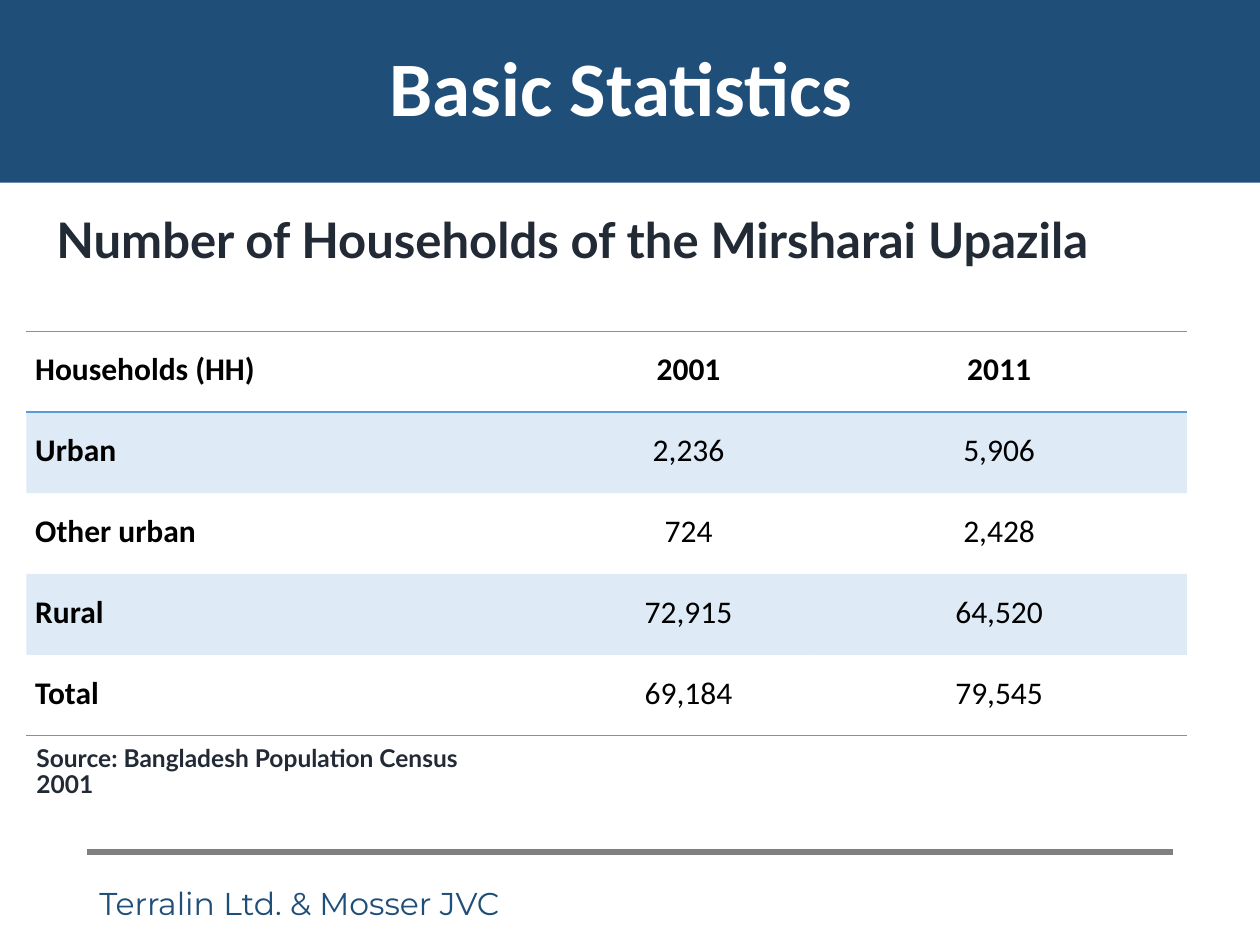
from lxml import etree
from pptx import Presentation
from pptx import util as u
from pptx.dml.color import RGBColor
from pptx.enum import shapes, text
from pptx.oxml import ns

NAVY, INK, GREY, BLUE = "1F4E79", "222A35", "808080", "5B9BD5"
WHITE, BLACK = "FFFFFF", "000000"
ALIGN = text.PP_ALIGN


def color(value):
    return RGBColor.from_string(value)


def add_element(parent, tag, **attributes):
    return etree.SubElement(parent, ns.qn(tag), attributes)


class SlideBuilder:
    heading_font, body_font, footer_font = "Calibri", "Lato", "Montserrat"
    band_alpha = "20000"

    def __init__(self, slide):
        self.slide = slide

    def place(self, shape, box):
        for name, value in zip(("left", "top", "width", "height"), box):
            setattr(shape, name, u.Inches(value))

    def set_words(self, frame, words, font, size, ink, bold=False, **paragraph_format):
        paragraph = frame.paragraphs[0]
        paragraph.text = words
        for name, value in paragraph_format.items():
            setattr(paragraph, name, value)
        values = {"name": font, "size": u.Pt(size), "bold": bold}
        for name, value in values.items():
            setattr(paragraph.runs[0].font, name, value)
        paragraph.runs[0].font.color.rgb = color(ink)

    def prepare(self, frame):
        frame.word_wrap = True
        frame.auto_size = text.MSO_AUTO_SIZE.NONE
        frame.vertical_anchor = text.MSO_ANCHOR.MIDDLE

    def title(self, words, box):
        shape = self.slide.shapes.title
        self.place(shape, box)
        shape.fill.solid()
        shape.fill.fore_color.rgb = color(NAVY)
        self.prepare(shape.text_frame)
        self.set_words(shape.text_frame, words, self.heading_font, 44, WHITE, True,
                       alignment=ALIGN.CENTER, line_spacing=0.9)

    def text_box(self, words, box, *style, **paragraph_format):
        shape = self.slide.shapes.add_textbox(*map(u.Inches, box))
        self.prepare(shape.text_frame)
        self.set_words(shape.text_frame, words, *style, **paragraph_format)

    def line(self, start, end, ink, width):
        connector = self.slide.shapes.add_connector(
            shapes.MSO_CONNECTOR.STRAIGHT, *map(u.Inches, start + end))
        connector.line.color.rgb = color(ink)
        connector.line.width = u.Pt(width)
        add_element(connector._element.spPr, "a:effectLst")

    def borders(self, cell, ruled):
        """Draw the sides named in ruled and clear the others."""
        properties = cell._tc.get_or_add_tcPr()
        for side in "LRTB":
            border = add_element(properties, f"a:ln{side}", w=str(u.Pt(1)))
            if side in ruled:
                fill = add_element(border, "a:solidFill")
                add_element(fill, "a:srgbClr", val=BLUE)
            else:
                add_element(border, "a:noFill")

    def band(self, cell):
        cell.fill.solid()
        cell.fill.fore_color.rgb = color(BLUE)
        shade = cell._tc.tcPr.find(ns.qn("a:solidFill"))[0]
        add_element(shade, "a:alpha", val=self.band_alpha)

    def table(self, rows, box, widths):
        table = self.slide.shapes.add_table(
            len(rows), len(widths), *map(u.Inches, box)).table
        table.first_row = table.horz_banding = False
        for column, width in zip(table.columns, widths):
            column.width = u.Inches(width)
        margins = {"margin_left": 0.07, "margin_right": 0.07,
                   "margin_top": 0, "margin_bottom": 0}
        ruled = {0: "TB", 1: "T", len(rows) - 1: "B"}
        for r, row in enumerate(rows):
            for c, words in enumerate(row):
                cell = table.cell(r, c)
                for name, value in margins.items():
                    setattr(cell, name, u.Inches(value))
                self.borders(cell, ruled.get(r, ""))
                if r % 2:
                    self.band(cell)
                else:
                    cell.fill.background()
                self.set_words(cell.text_frame, words, self.heading_font, 18, BLACK,
                               r == 0 or c == 0, line_spacing=1.5,
                               alignment=ALIGN.CENTER if c else ALIGN.JUSTIFY)


def main():
    presentation = Presentation()
    presentation.slide_width = u.Inches(10)
    presentation.slide_height = u.Inches(7.5)
    layout = presentation.slide_layouts.get_by_name("Title Only")
    builder = SlideBuilder(presentation.slides.add_slide(layout))

    builder.line((0.69, 6.76), (9.31, 6.76), GREY, 3.25)
    builder.text_box("Terralin Ltd. & Mosser JVC", (0.69, 6.9, 5.39, 0.53),
                     builder.footer_font, 18, NAVY)
    builder.title("Basic Statistics ", (0, 0, 10, 1.45))
    households = [
        ("Households (HH)", "2001", "2011"),
        ("Urban", "2,236", "5,906"),
        ("Other urban", "724", "2,428"),
        ("Rural", "72,915", "64,520"),
        ("Total", "69,184", "79,545"),
    ]
    builder.table(households, (0.21, 2.63, 9.21, 3.21), (4.28, 1.95, 2.98))
    builder.text_box("Number of Households of the Mirsharai Upazila",
                     (0.35, 1.52, 9.07, 0.81), builder.body_font, 28, INK, True,
                     line_spacing=0.9)
    builder.text_box("Source: Bangladesh Population Census 2001",
                     (0.19, 5.99, 3.88, 0.28), builder.body_font, 14, INK, True,
                     line_spacing=0.9)
    presentation.save("out.pptx")


if __name__ == "__main__":
    main()
